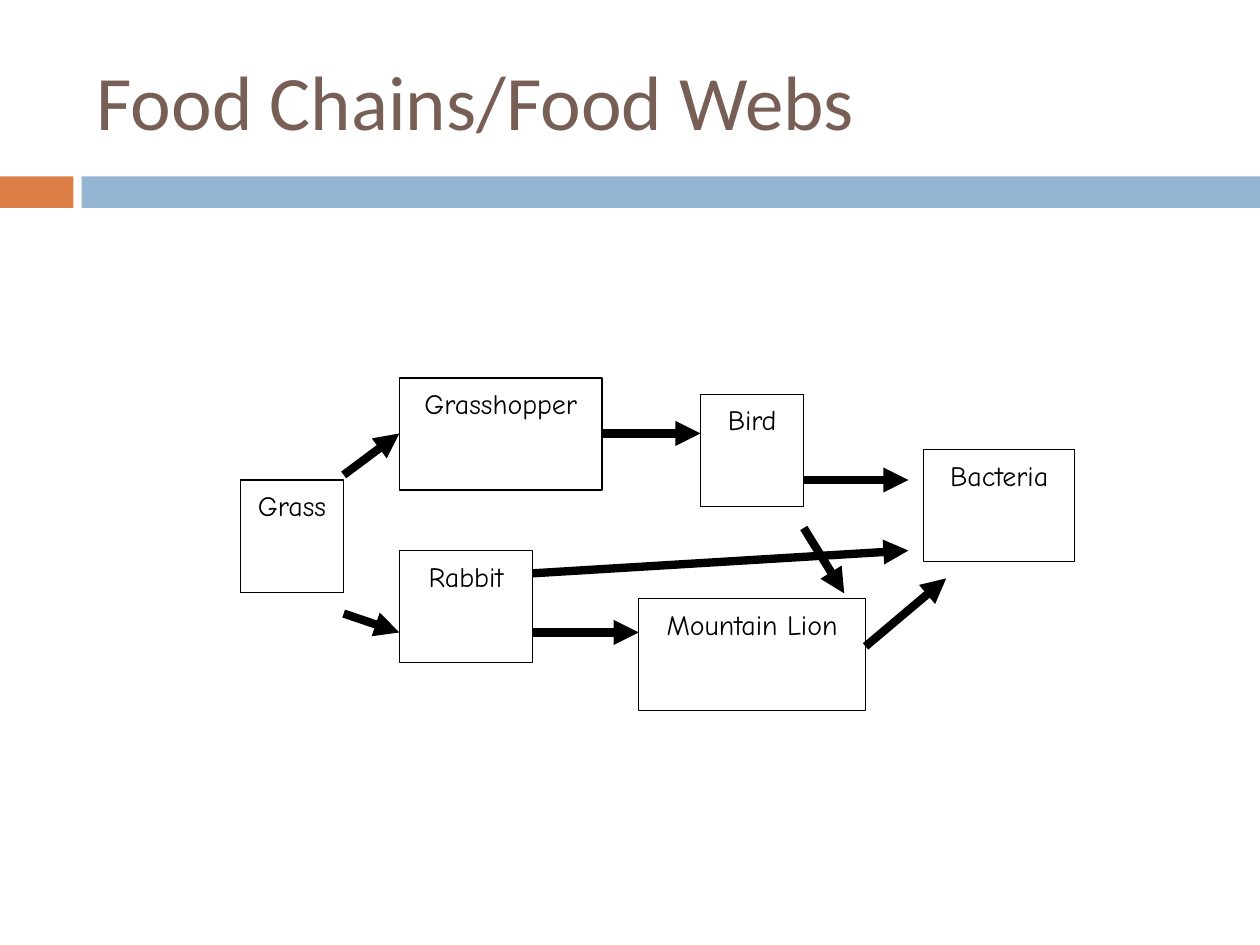
from lxml.etree import SubElement
from pptx import Presentation
from pptx.dml.color import RGBColor
from pptx.enum.shapes import MSO_CONNECTOR, MSO_SHAPE
from pptx.enum.text import MSO_ANCHOR, PP_ALIGN
from pptx.oxml.ns import qn
from pptx.util import Pt

COLORS = {
    "title": "775F55",
    "accent": "DD8047",
    "band": "94B6D2",
    "ink": "000000",
    "paper": "FFFFFF",
}
BOX_HEIGHT = 64.1

# name: left, top, width
ORGANISMS = {
    "Grass": (137.4, 274.3, 59),
    "Grasshopper": (228.2, 216, 115.9),
    "Rabbit": (228.2, 314.6, 76.3),
    "Bird": (400.3, 225.4, 59),
    "Mountain Lion": (365, 342, 129.6),
    "Bacteria": (527.8, 257, 86.4),
}

# eaten, start height, eater, end height, end offset from the eater's left edge
FEEDING = [
    ("Grass", 271.4, "Grasshopper", 247.7, 0),
    ("Grass", 350.6, "Rabbit", 361.4, 0),
    ("Grasshopper", 247.7, "Bird", 247.7, 0),
    ("Rabbit", 361.4, "Mountain Lion", 361.4, 0),
    ("Rabbit", 327.6, "Bacteria", 314.6, -8.7),
    ("Bird", 301.7, "Mountain Lion", 339.1, 117.4),
    ("Bird", 274.3, "Bacteria", 274.3, -8.7),
    ("Mountain Lion", 369.4, "Bacteria", 330.5, 12.9),
]


def color(name):
    return RGBColor.from_string(COLORS[name])


class FoodWebSlide:
    """Holds the style and the page being drawn on."""

    title_font = "Calibri"
    label_font = "Comic Neue"

    def __init__(self, page):
        self.page = page

    def title(self, text, left, top, width, height):
        box = self.page.shapes.title
        box.left, box.top, box.width, box.height = map(Pt, (left, top, width, height))
        frame = box.text_frame
        frame.text = text
        frame.vertical_anchor = MSO_ANCHOR.MIDDLE
        para = frame.paragraphs[0]
        para.alignment = PP_ALIGN.LEFT
        self.set_font(para, self.title_font, 44, "title")

    def set_font(self, para, name, size, color_name):
        para.font.name = name
        para.font.size = Pt(size)
        para.font.color.rgb = color(color_name)

    def rectangle(self, left, top, width, height, fill):
        box = self.page.shapes.add_shape(
            MSO_SHAPE.RECTANGLE, *map(Pt, (left, top, width, height)))
        box.shadow.inherit = False
        box.fill.solid()
        box.fill.fore_color.rgb = color(fill)
        box.line.fill.background()
        return box

    def organism(self, name, left, top, width):
        box = self.rectangle(left, top, width, BOX_HEIGHT, "paper")
        box.line.color.rgb = color("ink")
        box.line.width = Pt(0.75)
        frame = box.text_frame
        frame.text = name
        frame.word_wrap = True
        frame.vertical_anchor = MSO_ANCHOR.TOP
        para = frame.paragraphs[0]
        para.alignment = PP_ALIGN.CENTER
        para.line_spacing = 1.07
        para.space_after = Pt(8)
        self.set_font(para, self.label_font, 16, "ink")

    def arrow(self, start_x, start_y, end_x, end_y):
        arrow = self.page.shapes.add_connector(
            MSO_CONNECTOR.STRAIGHT, *map(Pt, (start_x, start_y, end_x, end_y)))
        arrow.line.color.rgb = color("ink")
        arrow.line.width = Pt(4.75)
        SubElement(arrow.line._get_or_add_ln(), qn("a:tailEnd"), type="triangle")
        SubElement(arrow._element.spPr, qn("a:effectLst"))


def main():
    deck = Presentation()
    deck.slide_width, deck.slide_height = Pt(720), Pt(540)
    slide = FoodWebSlide(deck.slides.add_slide(deck.slide_layouts[5]))

    slide.rectangle(0, 100.8, 42, 18, "accent")
    slide.rectangle(46.6, 100.8, 673.4, 18, "band")
    slide.title("Food Chains/Food Webs", 48, 18, 642, 78)

    for name, place in ORGANISMS.items():
        slide.organism(name, *place)
    for eaten, start_y, eater, end_y, offset in FEEDING:
        left, _, width = ORGANISMS[eaten]
        slide.arrow(left + width, start_y, ORGANISMS[eater][0] + offset, end_y)

    deck.save("out.pptx")


if __name__ == "__main__":
    main()
